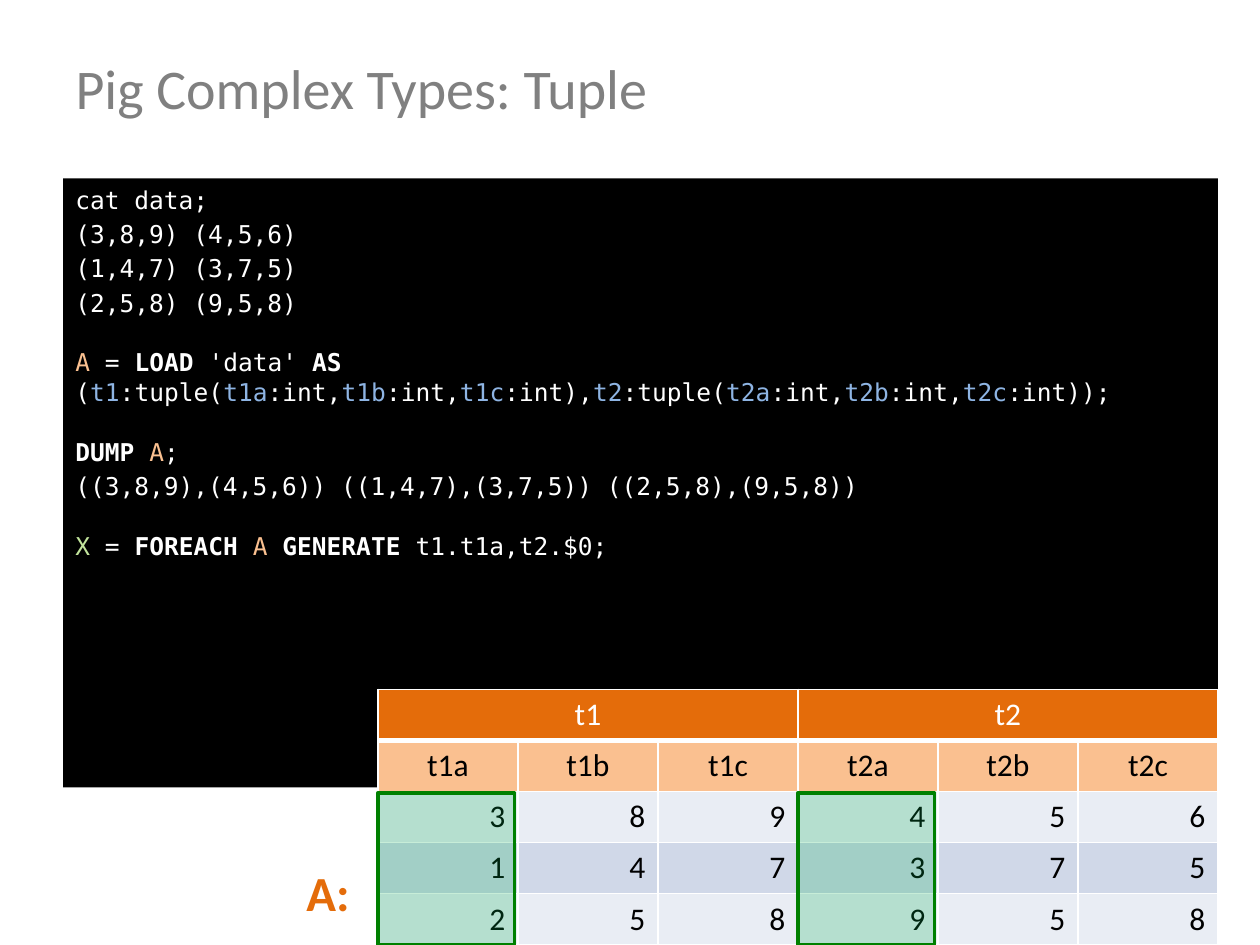
from lxml import etree
from pptx import Presentation
from pptx.dml.color import RGBColor
from pptx.enum.shapes import MSO_SHAPE
from pptx.enum.text import MSO_ANCHOR, PP_ALIGN
from pptx.oxml.ns import qn
from pptx.util import Pt

WHITE = RGBColor(0xFF, 0xFF, 0xFF)
BLACK = RGBColor(0, 0, 0)
GRAY = RGBColor(0x80, 0x80, 0x80)
ORANGE = RGBColor(0xE4, 0x6C, 0x0A)
PEACH = RGBColor(0xFA, 0xC0, 0x90)
BLUE = RGBColor(0x8E, 0xB4, 0xE3)
LIME = RGBColor(0xC2, 0xE4, 0x9C)
LIGHT_BAND = RGBColor(0xE9, 0xED, 0xF4)
DARK_BAND = RGBColor(0xD0, 0xD8, 0xE8)
GREEN = RGBColor(0x00, 0xB0, 0x50)
DARK_GREEN = RGBColor(0x00, 0x80, 0x00)

LINE_GAP, BLOCK_GAP = 2.8, 17.4
TABLE_LEFT, TABLE_TOP = 216, 393.9
COLUMN_WIDTH, ROW_HEIGHT = 80, 29.2


def add_span(para, text, size, color, font="Calibri", bold=False):
    span = para.add_run()
    span.text = text
    span.font.name = font
    span.font.size = Pt(size)
    span.font.bold = bold
    span.font.color.rgb = color


def add_border(cell, side, width):
    line = etree.SubElement(cell._tc.get_or_add_tcPr(), qn("a:ln" + side), w=str(Pt(width)))
    fill = etree.SubElement(line, qn("a:solidFill"))
    etree.SubElement(fill, qn("a:srgbClr"), val=str(WHITE))


deck = Presentation()
deck.slide_width, deck.slide_height = Pt(720), Pt(540)
page = deck.slides.add_slide(deck.slide_layouts[5])

# Code panel
panel = page.shapes.add_shape(MSO_SHAPE.RECTANGLE, Pt(36), Pt(102), Pt(660), Pt(348))
panel.shadow.inherit = False
panel.fill.solid()
panel.fill.fore_color.rgb = BLACK
panel.line.fill.background()
panel.text_frame.word_wrap = True
panel.text_frame.vertical_anchor = MSO_ANCHOR.TOP

schema = [(" (", WHITE, False)]
for name, ending in (("t1", "),"), ("t2", "));")):
    schema += [(name, BLUE, False), (":tuple(", WHITE, False)]
    for letter, after in (("a", ","), ("b", ","), ("c", ending)):
        schema += [(name + letter, BLUE, False), (":int" + after, WHITE, False)]

code_lines = [
    (LINE_GAP, [("cat data;", WHITE, False)]),
    (LINE_GAP, [("(3,8,9) (4,5,6)", WHITE, False)]),
    (LINE_GAP, [("(1,4,7) (3,7,5)", WHITE, False)]),
    (LINE_GAP, [("(2,5,8) (9,5,8)", WHITE, False)]),
    (BLOCK_GAP, [("A", PEACH, False), (" = ", WHITE, False), ("LOAD", WHITE, True),
                 (" 'data' ", WHITE, False), ("AS", WHITE, True)] + schema),
    (BLOCK_GAP, [("DUMP ", WHITE, True), ("A", PEACH, False), (";", WHITE, False)]),
    (LINE_GAP, [("((3,8,9),(4,5,6)) ((1,4,7),(3,7,5)) ((2,5,8),(9,5,8))", WHITE, False)]),
    (BLOCK_GAP, [("X ", LIME, False), ("= ", WHITE, False), ("FOREACH ", WHITE, True),
                 ("A ", PEACH, False), ("GENERATE", WHITE, True),
                 (" t1.t1a,t2.$0;", WHITE, False)]),
]
for index, (gap, spans) in enumerate(code_lines):
    para = panel.text_frame.add_paragraph() if index else panel.text_frame.paragraphs[0]
    para.alignment = PP_ALIGN.LEFT
    para.space_before = Pt(gap)
    for text, color, bold in spans:
        add_span(para, text, 14, color, "DejaVu Sans Mono", bold)

# Title
title = page.shapes.title
title.left, title.top, title.width, title.height = Pt(36), Pt(21.6), Pt(648), Pt(56.2)
title.text_frame.vertical_anchor = MSO_ANCHOR.MIDDLE
para = title.text_frame.paragraphs[0]
para.alignment = PP_ALIGN.LEFT
add_span(para, "Pig Complex Types: Tuple", 32, GRAY)

# Relation table
rows = [
    ["t1", "", "", "t2", "", ""],
    ["t1a", "t1b", "t1c", "t2a", "t2b", "t2c"],
    ["3", "8", "9", "4", "5", "6"],
    ["1", "4", "7", "3", "7", "5"],
    ["2", "5", "8", "9", "5", "8"],
]
row_fills = [ORANGE, PEACH, LIGHT_BAND, DARK_BAND, LIGHT_BAND]
table = page.shapes.add_table(5, 6, Pt(TABLE_LEFT), Pt(TABLE_TOP),
                              Pt(6 * COLUMN_WIDTH), Pt(5 * ROW_HEIGHT)).table
for column in table.columns:
    column.width = Pt(COLUMN_WIDTH)
for row_index, values in enumerate(rows):
    table.rows[row_index].height = Pt(ROW_HEIGHT)
    for column_index, value in enumerate(values):
        cell = table.cell(row_index, column_index)
        for side in "LRTB":
            add_border(cell, side, 3 if row_index == 0 and side == "B" else 1)
        cell.fill.solid()
        cell.fill.fore_color.rgb = row_fills[row_index]
        if value:
            para = cell.text_frame.paragraphs[0]
            para.alignment = PP_ALIGN.CENTER if row_index < 2 else PP_ALIGN.RIGHT
            add_span(para, value, 18, BLACK if row_index else WHITE)
for first in (0, 3):
    table.cell(0, first).merge(table.cell(0, first + 2))

# Relation name
label = page.shapes.add_textbox(Pt(168), Pt(489.6), Pt(228), Pt(41))
label.text_frame.word_wrap = True
add_span(label.text_frame.paragraphs[0], "A:", 28, ORANGE, bold=True)

# Highlights over the generated columns t1a and t2a
for column_index in (0, 3):
    highlight = page.shapes.add_shape(
        MSO_SHAPE.RECTANGLE, Pt(TABLE_LEFT + column_index * COLUMN_WIDTH), Pt(453),
        Pt(78), Pt(87))
    highlight.shadow.inherit = False
    highlight.fill.solid()
    highlight.fill.fore_color.rgb = GREEN
    color = highlight.fill._xPr.find(qn("a:solidFill"))[0]
    etree.SubElement(color, qn("a:alpha"), val="22000")
    highlight.line.color.rgb = DARK_GREEN
    highlight.line.width = Pt(2)

deck.save("out.pptx")
